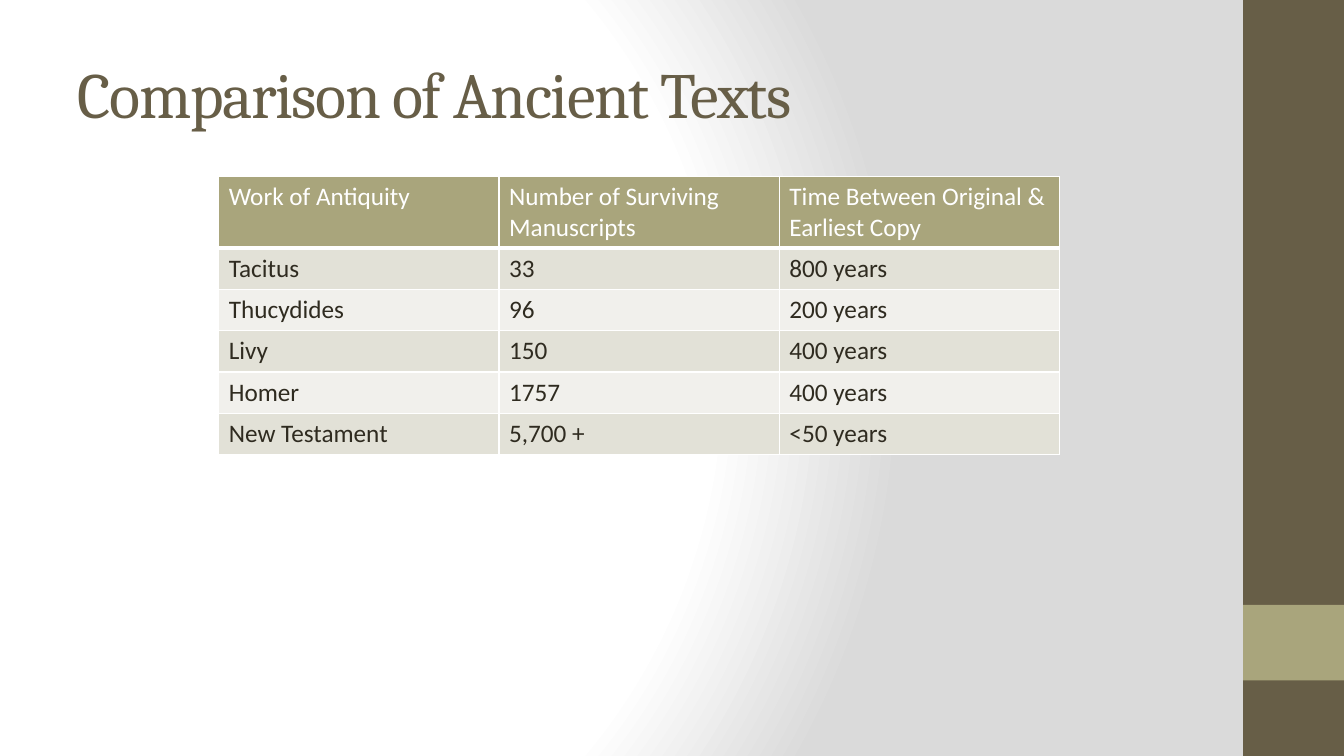
from dataclasses import dataclass

from pptx import Presentation
from pptx.dml.color import RGBColor as Rgb
from pptx.enum.shapes import MSO_SHAPE as Kind
from pptx.enum.text import MSO_ANCHOR as Anchor, MSO_AUTO_SIZE as Fit, PP_ALIGN as Align
from pptx.oxml import parse_xml
from pptx.oxml.ns import nsdecls, qn
from pptx.slide import Slide
from pptx.table import _Cell as Cell
from pptx.text.text import Font
from pptx.util import Inches, Pt


@dataclass(frozen=True)
class Theme:
    brown: str = "675E47"
    olive: str = "A9A57C"
    ink: str = "2F2B20"
    white: str = "FFFFFF"
    gray: str = "DADADA"
    bands: tuple[str, str] = ("E2E1D7", "F1F0EC")
    head: str = "Cambria"
    body: str = "Calibri"
    large: float = 46
    small: float = 18


@dataclass(frozen=True)
class Bar:
    top: float
    height: float
    color: str


@dataclass(frozen=True)
class Work:
    name: str
    count: str
    gap: str


THEME = Theme()
BARS = [Bar(0, 7.5, THEME.brown), Bar(6, 0.75, THEME.olive)]
WORKS = [
    Work("Work of Antiquity", "Number of Surviving Manuscripts",
         "Time Between Original & Earliest Copy"),
    Work("Tacitus", "33", "800 years"),
    Work("Thucydides", "96", "200 years"),
    Work("Livy", "150", "400 years"),
    Work("Homer", "1757", "400 years"),
    Work("New Testament", "5,700 +", "<50 years"),
]


def style(font: Font, name: str, size: float, color: str) -> None:
    font.name = name
    font.size = Pt(size)
    font.bold = False
    font.color.rgb = Rgb.from_string(color)


def paint_back(slide: Slide) -> None:
    slide.background.fill.solid()
    back = slide.element.find(".//" + qn("p:bgPr"))
    stops = [(0, THEME.white), (75, THEME.white), (100, THEME.gray)]
    marks = "".join(
        f'<a:gs pos="{pos * 1000}"><a:srgbClr val="{color}"/></a:gs>'
        for pos, color in stops
    )
    blend = parse_xml(
        f'<a:gradFill {nsdecls("a")} rotWithShape="1"><a:gsLst>{marks}</a:gsLst>'
        '<a:path path="circle"><a:fillToRect l="20000" t="50000" r="100000" b="50000"/>'
        "</a:path></a:gradFill>"
    )
    back.replace(back[0], blend)


def draw_bar(slide: Slide, bar: Bar) -> None:
    shape = slide.shapes.add_shape(
        Kind.RECTANGLE, Inches(12.33), Inches(bar.top), Inches(1), Inches(bar.height)
    )
    shape.shadow.inherit = False
    shape.fill.solid()
    shape.fill.fore_color.rgb = Rgb.from_string(bar.color)
    shape.line.fill.background()


def set_title(slide: Slide, text: str) -> None:
    title = slide.shapes.title
    title.left, title.top = Inches(0.67), Inches(0.3)
    title.width, title.height = Inches(11.11), Inches(1.25)
    frame = title.text_frame
    frame.text = text
    frame.word_wrap = True
    frame.auto_size = Fit.NONE
    frame.vertical_anchor = Anchor.MIDDLE
    line = frame.paragraphs[0]
    line.alignment = Align.LEFT
    run = line.runs[0]
    style(run.font, THEME.head, THEME.large, THEME.brown)
    run.font._element.set("spc", "-100")


def edge_cell(cell: Cell, row: int) -> None:
    props = cell._tc.get_or_add_tcPr()
    widths = {"L": 1, "R": 1, "T": 3 if row == 1 else 1, "B": 3 if row == 0 else 1}
    for side, width in widths.items():
        props.append(parse_xml(
            f'<a:ln{side} {nsdecls("a")} w="{Pt(width)}"><a:solidFill>'
            f'<a:srgbClr val="{THEME.white}"/></a:solidFill></a:ln{side}>'
        ))


def fill_cell(cell: Cell, text: str, row: int) -> None:
    edge_cell(cell, row)
    cell.fill.solid()
    shade = THEME.bands[(row - 1) % 2] if row else THEME.olive
    cell.fill.fore_color.rgb = Rgb.from_string(shade)
    cell.text_frame.text = text
    run = cell.text_frame.paragraphs[0].runs[0]
    style(run.font, THEME.body, THEME.small, THEME.ink if row else THEME.white)


def draw_table(slide: Slide, works: list[Work]) -> None:
    table = slide.shapes.add_table(
        len(works), 3, Inches(2.17), Inches(1.75), Inches(8.33), Inches(2.73)
    ).table
    for col in table.columns:
        col.width = Inches(2.78)
    for row, work in enumerate(works):
        table.rows[row].height = Inches(0.41 if row else 0.7)
        for col, text in enumerate((work.name, work.count, work.gap)):
            fill_cell(table.cell(row, col), text, row)


def main() -> None:
    deck = Presentation()
    deck.slide_width, deck.slide_height = Inches(13.33), Inches(7.5)
    slide = deck.slides.add_slide(deck.slide_layouts[5])
    paint_back(slide)
    for bar in BARS:
        draw_bar(slide, bar)
    set_title(slide, "Comparison of Ancient Texts")
    draw_table(slide, WORKS)
    deck.save("out.pptx")


if __name__ == "__main__":
    main()
